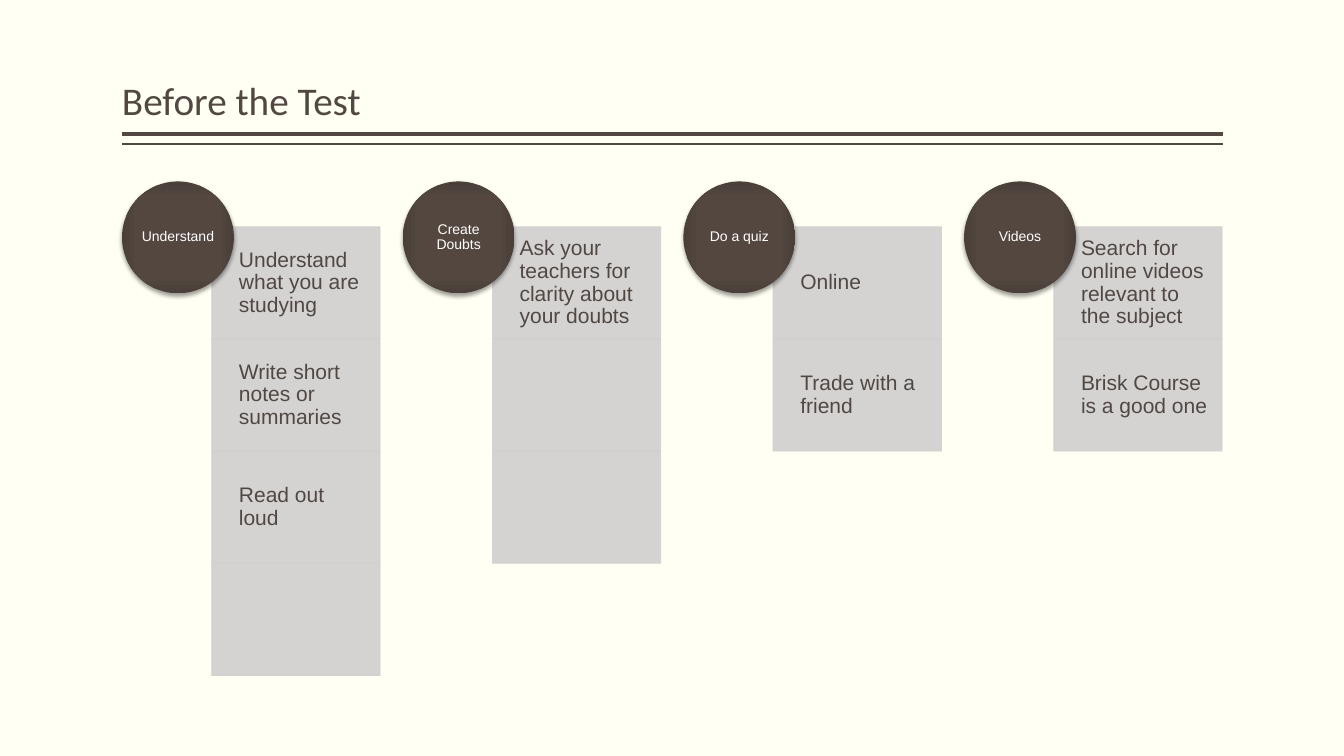
from pptx import Presentation
from pptx.dml.color import RGBColor
from pptx.enum.shapes import MSO_CONNECTOR, MSO_SHAPE
from pptx.enum.text import MSO_ANCHOR, PP_ALIGN
from pptx.oxml import parse_xml
from pptx.oxml.ns import nsdecls, qn
from pptx.util import Inches, Pt
from lxml.etree import SubElement

CREAM = RGBColor(0xFF, 0xFF, 0xF3)
BROWN = RGBColor(0x51, 0x48, 0x43)
GREY = RGBColor(0xD0, 0xCF, 0xCF)
WHITE = RGBColor(0xFF, 0xFF, 0xFF)
STOPS = [
    (0, RGBColor(0x54, 0x47, 0x40)),
    (71, RGBColor(0x53, 0x47, 0x40)),
    (100, RGBColor(0x4A, 0x3F, 0x39)),
]

LEFT, WIDTH = 1.21, 10.92
STEP, TOP = 2.784, 1.8
DISC, CELL_W, CELL_H = 1.11, 1.67, 1.113
CELL_X, CELL_Y = 0.89, 0.45

TITLE = {"size": Pt(28), "name": "Calibri"}
HEAD = {"size": Pt(10), "name": "Arial"}
BODY = {"size": Pt(15), "name": "Arial"}

GROUPS = [
    ("Understand", ["Understand what you are studying",
                    "Write short notes or summaries", "Read out loud", ""]),
    ("Create Doubts", ["Ask your teachers for clarity about your doubts", "", ""]),
    ("Do a quiz", ["Online", "Trade with a friend"]),
    ("Videos", ["Search for online videos relevant to the subject",
                "Brisk Course is a good one"]),
]


def apply(target, values):
    for key, value in values.items():
        setattr(target, key, value)


def write(shape, text, font, color, align, anchor, insets):
    frame = shape.text_frame
    sides = ("margin_left", "margin_top", "margin_right", "margin_bottom")
    apply(frame, dict(zip(sides, map(Inches, insets))))
    apply(frame, {"word_wrap": True, "vertical_anchor": anchor})
    para = frame.paragraphs[0]
    apply(para, {"alignment": align, "line_spacing": 0.9})
    run = para.add_run()
    run.text = text
    apply(run.font, font)
    run.font.color.rgb = color


def add_title(slide, left, top, width, height):
    box = slide.shapes.add_textbox(*map(Inches, (left, top, width, height)))
    write(box, "Before the Test", TITLE, BROWN, PP_ALIGN.LEFT,
          MSO_ANCHOR.BOTTOM, (0, 0.05, 0, 0.05))
    base = top + height
    for gap, weight in ((0.05, 3), (0.15, 1)):
        y = Inches(base + gap)
        rule = slide.shapes.add_connector(
            MSO_CONNECTOR.STRAIGHT, Inches(left + width), y, Inches(left), y)
        rule.line.color.rgb = BROWN
        rule.line.width = Pt(weight)
        SubElement(rule._element.spPr, qn("a:effectLst"))


def add_cell(slide, left, top, width, height, text):
    cell = slide.shapes.add_shape(
        MSO_SHAPE.RECTANGLE, *map(Inches, (left, top, width, height)))
    cell.shadow.inherit = False
    cell.fill.solid()
    cell.fill.fore_color.rgb = GREY
    cell.line.color.rgb = GREY
    cell.line.width = Pt(0.5)
    for color in cell._element.spPr.iter(qn("a:srgbClr")):
        SubElement(color, qn("a:alpha"), val="90000")
    if text:
        write(cell, text, BODY, BROWN, PP_ALIGN.LEFT,
              MSO_ANCHOR.MIDDLE, (0.27, 0.12, 0.12, 0.12))


def add_disc(slide, left, top, size, text):
    disc = slide.shapes.add_shape(
        MSO_SHAPE.OVAL, *map(Inches, (left, top, size, size)))
    disc.shadow.inherit = False
    disc.line.fill.background()
    stops = "".join(
        f'<a:gs pos="{pos * 1000}"><a:srgbClr val="{color}"/></a:gs>'
        for pos, color in STOPS)
    props = disc._element.spPr
    props.insert(2, parse_xml(
        f'<a:gradFill {nsdecls("a")} rotWithShape="1"><a:gsLst>{stops}</a:gsLst>'
        '<a:path path="rect"><a:fillToRect l="50000" t="50000" r="50000" '
        'b="50000"/></a:path></a:gradFill>'))
    props.find(qn("a:effectLst")).append(parse_xml(
        f'<a:outerShdw {nsdecls("a")} blurRad="{Pt(3.1)}" dist="{Pt(2)}" '
        'dir="5400000" rotWithShape="0"><a:srgbClr val="000000">'
        '<a:alpha val="38000"/></a:srgbClr></a:outerShdw>'))
    write(disc, text, HEAD, WHITE, PP_ALIGN.CENTER,
          MSO_ANCHOR.MIDDLE, (0, 0, 0, 0))


def add_group(slide, left, top, head, items):
    for row, item in enumerate(items):
        add_cell(slide, left + CELL_X, top + CELL_Y + row * CELL_H,
                 CELL_W, CELL_H, item)
    add_disc(slide, left, top, DISC, head)


def main():
    deck = Presentation()
    apply(deck, {"slide_width": Inches(13.33), "slide_height": Inches(7.5)})
    slide = deck.slides.add_slide(deck.slide_layouts[6])
    slide.background.fill.solid()
    slide.background.fill.fore_color.rgb = CREAM
    add_title(slide, LEFT, 0.08, WIDTH, 1.2)
    for col, (head, items) in enumerate(GROUPS):
        add_group(slide, LEFT + col * STEP, TOP, head, items)
    deck.save("out.pptx")


if __name__ == "__main__":
    main()
